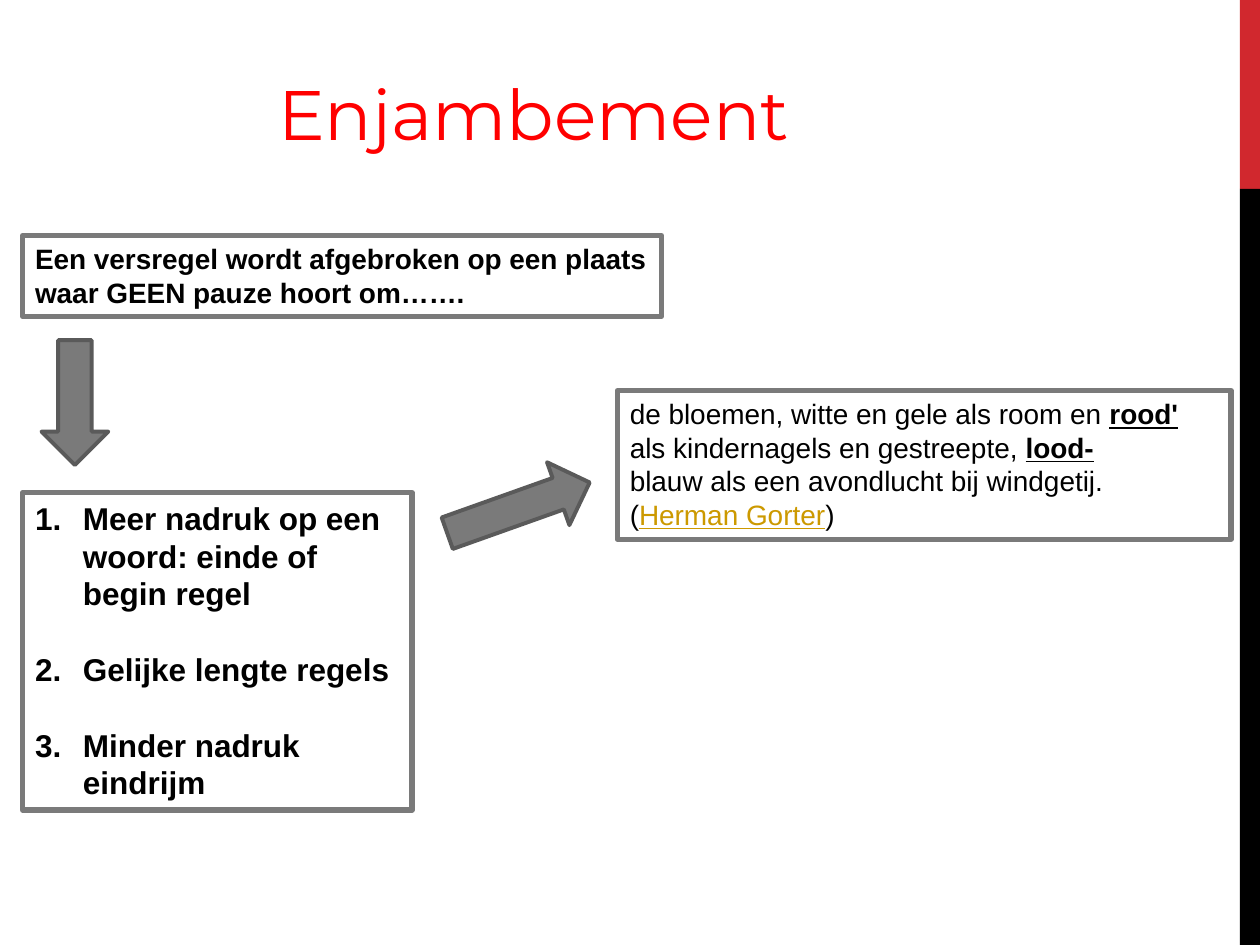
from dataclasses import dataclass

from lxml import etree
from pptx import Presentation
from pptx.dml.color import RGBColor
from pptx.enum.shapes import MSO_SHAPE
from pptx.enum.text import MSO_AUTO_SIZE
from pptx.oxml.ns import qn
from pptx.util import Inches, Pt

RECT = MSO_SHAPE.RECTANGLE
DOWN = MSO_SHAPE.DOWN_ARROW
GROW = MSO_AUTO_SIZE.SHAPE_TO_FIT_TEXT
COLS, ROWS = 100, 75


@dataclass(frozen=True)
class Theme:
    """Colours, fonts and type sizes."""
    red: str = "FF0000"
    band: str = "D1282E"
    ink: str = "000000"
    gray: str = "7A7A7A"
    edge: str = "5A5A5A"
    gold: str = "CC9900"
    head: str = "Montserrat"
    body: str = "Arial"
    big: int = 40
    mid: int = 18
    small: int = 16
    lead: float = 1.2


class Deck:
    """Draws styled elements on the current slide."""

    def __init__(self, theme):
        """Open a blank slide."""
        self.theme = theme
        self.file = Presentation()
        self.file.slide_width, self.file.slide_height = Inches(10), Inches(7.5)
        self.slide = self.file.slides.add_slide(self.file.slide_layouts[6])

    def place(self, col, row, wide, high):
        """Turn grid units into lengths."""
        x, y = self.file.slide_width / COLS, self.file.slide_height / ROWS
        return [round(n) for n in (col * x, row * y, wide * x, high * y)]

    def shape(self, kind, area, fill, edge=None, turn=0):
        """Add a filled preset shape."""
        item = self.slide.shapes.add_shape(kind, *self.place(*area))
        item.shadow.inherit = False
        item.fill.solid()
        item.fill.fore_color.rgb = RGBColor.from_string(fill)
        item.rotation = turn
        if edge:
            item.line.color.rgb = RGBColor.from_string(edge)
            item.line.width = Pt(2.25)
        else:
            item.line.fill.background()

    def text(self, area, size, font, edge=None):
        """Add a wrapped text box and return a writer for its paragraphs."""
        box = self.slide.shapes.add_textbox(*self.place(*area))
        frame = box.text_frame
        frame.word_wrap = True
        frame.auto_size = GROW
        if edge:
            box.line.color.rgb = RGBColor.from_string(edge)
            box.line.width = Pt(3)
        first = frame.paragraphs[0]
        first.font.size, first.font.name = Pt(size), font
        return frame

    def run(self, para, words, size, font, color, bold=False, under=False):
        """Add one styled run."""
        run = para.add_run()
        run.text = words
        face = run.font
        face.size, face.name = Pt(size), font
        face.bold, face.underline = bold, under
        face.color.rgb = RGBColor.from_string(color)

    def title(self, area, words):
        """Add the heading."""
        look = self.theme
        frame = self.text(area, look.big, look.head)
        self.run(frame.paragraphs[0], words, look.big, look.head, look.red)

    def note(self, area, lines):
        """Add a framed text whose lines are lists of styled runs."""
        look = self.theme
        para = self.text(area, look.small, look.body, look.gray).paragraphs[0]
        para.line_spacing = Pt(look.small * look.lead)
        for i, line in enumerate(lines):
            if i:
                para.add_line_break()
            for words, color, bold, under in line:
                self.run(para, words, look.small, look.body, color, bold, under)

    def steps(self, area, items):
        """Add a framed numbered list with a line of space between items."""
        look = self.theme
        frame = self.text(area, look.mid, look.body, look.gray)
        lead = Pt(look.mid * look.lead)
        for i, words in enumerate(items):
            para = frame.add_paragraph() if i else frame.paragraphs[0]
            para.line_spacing = lead
            para.space_before = lead if i else Pt(0)
            self.run(para, words, look.mid, look.body, look.ink, True)
            props = para._p.get_or_add_pPr()
            props.set("marL", str(Inches(0.38)))
            props.set("indent", str(-Inches(0.38)))
            mark = etree.Element(qn("a:buAutoNum"), type="arabicPeriod")
            props.insert_element_before(mark, "a:tabLst", "a:defRPr", "a:extLst")


def main():
    """Build and save the slide."""
    look = Theme()
    deck = Deck(look)
    ink = look.ink
    deck.shape(RECT, (98.4, 0, 1.6, 15), look.band)
    deck.shape(RECT, (98.4, 15, 1.6, 60), ink)
    deck.title((21.1, 5.1, 50.9, 7.7), "Enjambement")
    deck.steps((1.8, 39.1, 30.9, 25.2), [
        "Meer nadruk op een woord: einde of begin regel",
        "Gelijke lengte regels",
        "Minder nadruk eindrijm",
    ])
    deck.note((1.8, 18.7, 50.7, 6.4), [[(
        "Een versregel wordt afgebroken op een plaats waar GEEN pauze hoort om…….",
        ink, True, False)]])
    deck.note((49, 31, 48.7, 11.8), [
        [("de bloemen, witte en gele als room en ", ink, False, False),
         ("rood'", ink, True, True)],
        [("als kindernagels en gestreepte, ", ink, False, False),
         ("lood-", ink, True, True)],
        [("blauw als een avondlucht bij windgetij.", ink, False, False)],
        [("(", ink, False, False),
         ("Herman Gorter", look.gold, False, True),
         (")", ink, False, False)],
    ])
    deck.shape(DOWN, (3.3, 27, 5.3, 9.9), look.gray, look.edge)
    deck.shape(DOWN, (38.5, 34.3, 5.3, 12), look.gray, look.edge, 250.4)
    deck.file.save("out.pptx")


if __name__ == "__main__":
    main()
